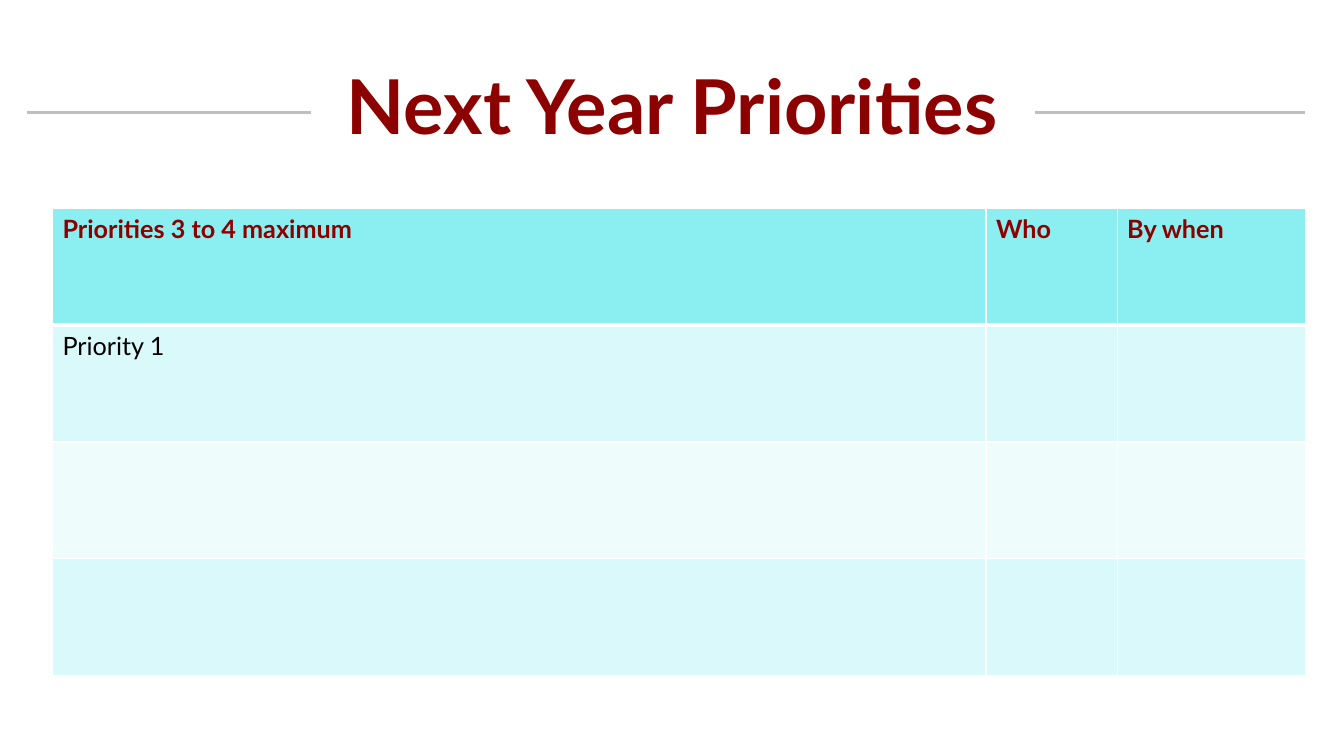
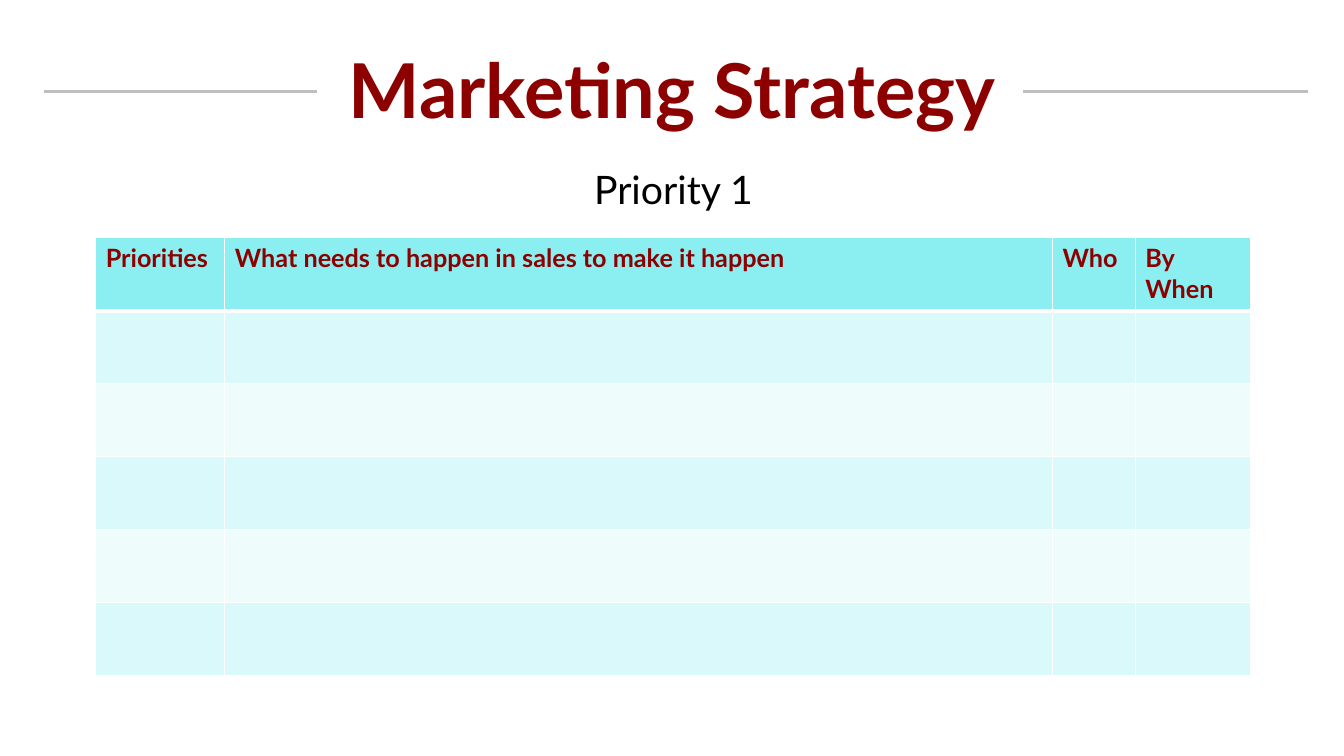
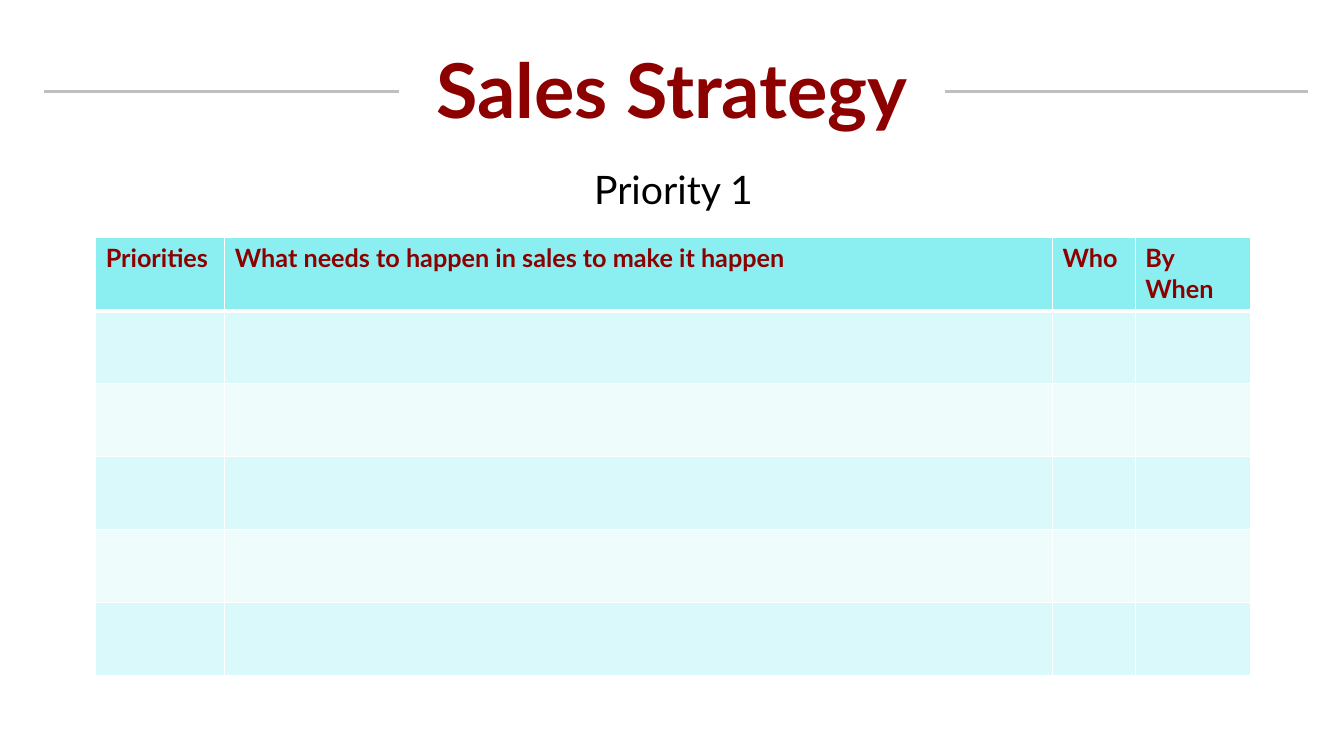
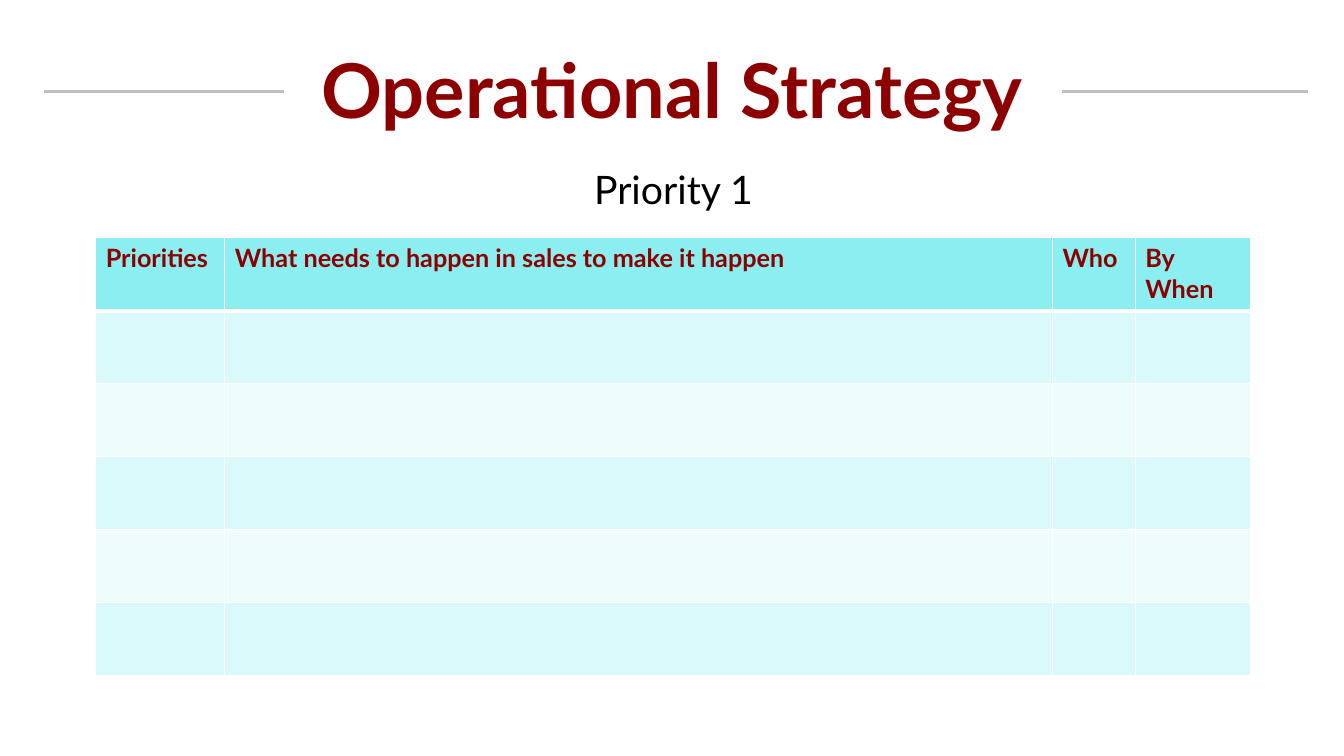
from lxml.etree import SubElement as Sub
from pptx import Presentation
from pptx.dml.color import RGBColor
from pptx.enum.shapes import MSO_CONNECTOR as Link
from pptx.enum.text import MSO_ANCHOR as Anchor, MSO_AUTO_SIZE as Fit, PP_ALIGN as Align
from pptx.oxml.ns import qn
from pptx.util import Emu, Pt


def px(*vals):
    return [Emu(val * 9144) for val in vals]


def hue(code):
    return RGBColor.from_string(code)


def put(frame, text, size=18, color="000000", bold=False, align=Align.LEFT, gap=None):
    para = frame.paragraphs[0]
    para.alignment = align
    para.line_spacing = gap
    run = para.add_run()
    run.text = text
    font = run.font
    font.name, font.size, font.bold = "Lato", Pt(size), bold
    font.color.rgb = hue(color)


class Deck:
    """Holds the shared style and the current slide."""

    red, gray, white = "8D0000", "BFBFBF", "FFFFFF"
    head, bands = "8BEFF1", ("DAF9FA", "EEFCFC")

    def __init__(self):
        self.show = Presentation()
        self.show.slide_width, self.show.slide_height = px(1333, 750)

    def page(self, text, top, rule, spans):
        self.slide = self.show.slides.add_slide(self.show.slide_layouts[5])
        title = self.slide.shapes.title
        title.left, title.top, title.width, title.height = px(258, top, 817, 145)
        frame = title.text_frame
        frame.word_wrap, frame.auto_size = True, Fit.NONE
        frame.vertical_anchor = Anchor.MIDDLE
        put(frame, text, size=54, color=self.red, bold=True, align=Align.CENTER, gap=0.9)
        for start, end in spans:
            self.line(start, end, rule)

    def line(self, start, end, y):
        line = self.slide.shapes.add_connector(Link.STRAIGHT, *px(start, y, end, y))
        line.line.color.rgb = hue(self.gray)
        line.line.width = Pt(2.25)
        Sub(line._element.spPr, qn("a:effectLst"))

    def label(self, text, *box):
        frame = self.slide.shapes.add_textbox(*px(*box)).text_frame
        frame.word_wrap, frame.auto_size = True, Fit.SHAPE_TO_FIT_TEXT
        put(frame, text, size=28, align=Align.CENTER)

    def edge(self, cell, side, width):
        props = cell._tc.get_or_add_tcPr()
        line = Sub(props, qn("a:ln" + side), w=str(Pt(width)))
        Sub(Sub(line, qn("a:solidFill")), qn("a:srgbClr"), val=self.white)

    def table(self, left, top, high, cols, rows):
        box = px(left, top, sum(cols), high)
        grid = self.slide.shapes.add_table(len(rows), len(cols), *box).table
        grid.first_row = grid.horz_banding = False
        for col, width in zip(grid.columns, px(*cols)):
            col.width = width
        for i, texts in enumerate(rows):
            top_row = i == 0
            for j in range(len(cols)):
                cell = grid.cell(i, j)
                thick = {"T": 3 if i == 1 else 1, "B": 3 if top_row else 1}
                for side in "LRTB":
                    self.edge(cell, side, thick.get(side, 1))
                cell.fill.solid()
                cell.fill.fore_color.rgb = hue(self.head if top_row else self.bands[(i - 1) % 2])
                if j < len(texts):
                    put(cell.text_frame, texts[j], bold=top_row,
                        color=self.red if top_row else "000000")


def main():
    deck = Deck()
    deck.page("Next Year Priorities", 37, 112, [(27, 308), (1027, 1294)])
    deck.table(52, 207, 463, [926, 130, 187],
               [["Priorities 3 to 4 maximum", "Who", "By when"], ["Priority 1"], [], []])

    heads = ["Priorities", "What needs to happen in sales to make it happen", "Who", "By When"]
    plans = [("Marketing", 314, 1015), ("Sales", 396, 937), ("Operational", 282, 1053)]
    for name, end, start in plans:
        deck.page(f"{name} Strategy", 21, 91, [(44, end), (start, 1297)])
        deck.table(95, 236, 434, [128, 821, 82, 114], [heads] + [[]] * 5)
        deck.label("Priority 1", 95, 159, 1146, 57)
    deck.show.save("out.pptx")


if __name__ == "__main__":
    main()
